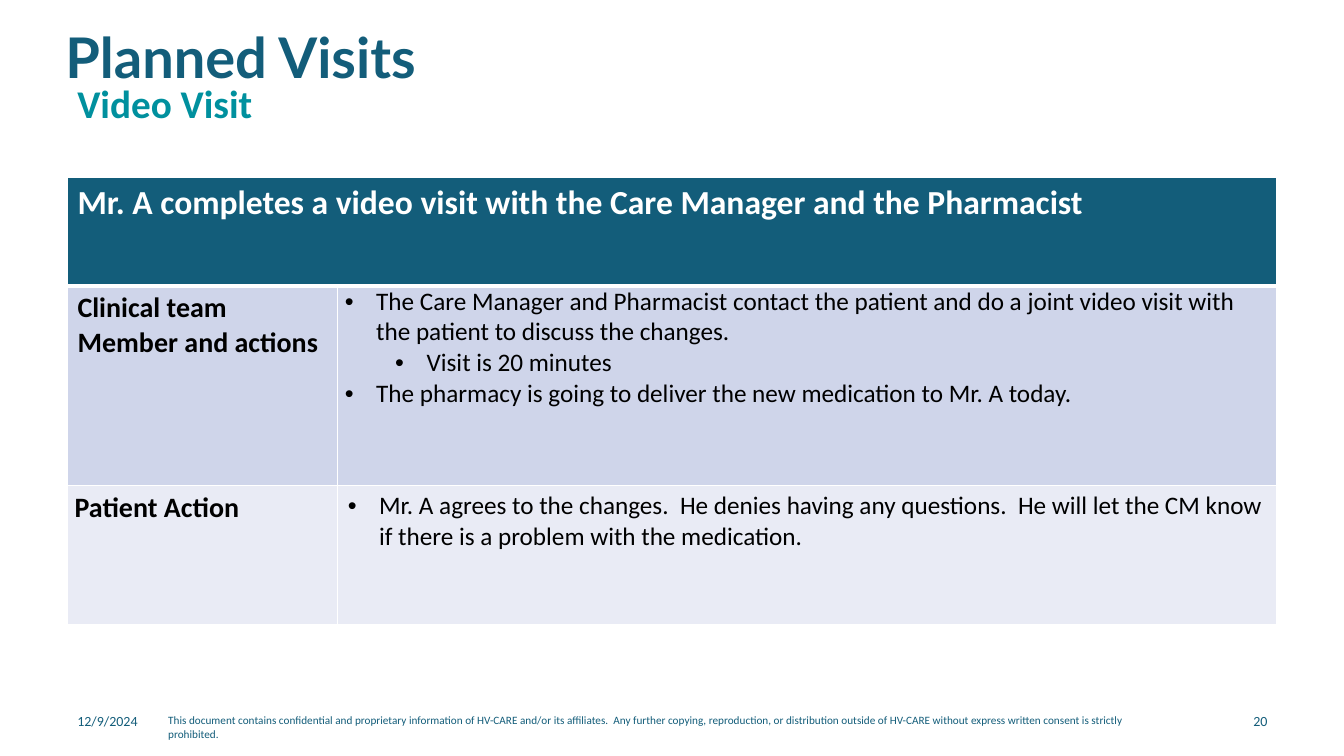
"""Build the Planned Visits slide with its video visit table."""
from dataclasses import dataclass
from typing import Optional

from lxml.etree import SubElement
from pptx import Presentation
from pptx.dml.color import RGBColor
from pptx.enum.text import MSO_ANCHOR as Anchor, PP_ALIGN as Align
from pptx.oxml.ns import qn
from pptx.util import Cm, Pt

COLORS = {
    "navy": "135D7A",
    "teal": "00909E",
    "white": "FFFFFF",
    "black": "000000",
    "lavender": "CFD5EA",
    "mist": "E9EBF5",
}
COLUMN_WIDTHS = (6.81, 23.67)
ROW_HEIGHTS = (2.74, 5.03, 3.51)
BULLET_INDENT = 0.79
LEVEL_INDENT = 1.27


@dataclass(frozen=True)
class Style:
    size: float
    color: str
    bold: bool = False
    font: str = "Calibri"
    spacing: Optional[float] = None
    align: Align = Align.LEFT


@dataclass(frozen=True)
class Label:
    text: str
    left: float
    top: float
    width: float
    height: float
    style: Style
    anchor: Anchor = Anchor.TOP


@dataclass(frozen=True)
class Entry:
    row: int
    column: int
    lines: tuple[tuple[str, int], ...]
    style: Style
    fill: str
    bulleted: bool = False
    tight: bool = False


FOOTER = Style(10, "navy")
ACTOR = Style(20, "black", bold=True)
ACTION = Style(18, "black")

LABELS = (
    Label("Planned Visits", 1.4, 0.64, 29.85, 1.57,
          Style(40, "navy", bold=True, font="Lato", spacing=0.9)),
    Label("12/9/2024", 1.7, 17.65, 2.57, 1.02, FOOTER, Anchor.MIDDLE),
    Label("20", 29.62, 17.65, 2.57, 1.02, Style(10, "navy", align=Align.RIGHT), Anchor.MIDDLE),
    Label("This document contains confidential and proprietary information of HV-CARE "
          "and/or its affiliates.  Any further copying, reproduction, or distribution "
          "outside of HV-CARE without express written consent is strictly prohibited.",
          3.99, 17.86, 25.91, 0.81, Style(8, "navy")),
    Label("Video Visit", 1.7, 1.04, 29.62, 2.29,
          Style(28, "teal", bold=True, spacing=0.9), Anchor.BOTTOM),
)

ENTRIES = (
    Entry(0, 0, (("Mr. A completes a video visit with the Care Manager and the Pharmacist", 0),),
          Style(24, "white", bold=True), "navy"),
    Entry(1, 0, (("Clinical team Member and actions", 0),), ACTOR, "lavender"),
    Entry(1, 1, (
        ("The Care Manager and Pharmacist contact the patient and do a joint video visit "
         "with the patient to discuss the changes.", 0),
        ("Visit is 20 minutes", 1),
        ("The pharmacy is going to deliver the new medication to Mr. A today.", 0),
    ), ACTION, "lavender", bulleted=True, tight=True),
    Entry(2, 0, (("Patient Action", 0),), Style(20, "black", bold=True, spacing=1.15),
          "mist", tight=True),
    Entry(2, 1, (
        ("Mr. A agrees to the changes.  He denies having any questions.  He will let the "
         "CM know if there is a problem with the medication.", 0),
    ), ACTION, "mist", bulleted=True),
)


def rgb(name: str) -> RGBColor:
    """Return the named colour."""
    return RGBColor.from_string(COLORS[name])


def write(paragraph, text: str, style: Style) -> None:
    """Set the text of a paragraph and format it."""
    paragraph.text = text
    paragraph.alignment = style.align
    if style.spacing:
        paragraph.line_spacing = style.spacing
    for run in paragraph.runs:
        run.font.name = style.font
        run.font.size = Pt(style.size)
        run.font.bold = style.bold
        run.font.color.rgb = rgb(style.color)


def add_bullet(paragraph, level: int) -> None:
    """Give a paragraph a hanging bullet at its level."""
    paragraph.level = level
    properties = paragraph._p.get_or_add_pPr()
    properties.set("marL", str(Cm(BULLET_INDENT + level * LEVEL_INDENT)))
    properties.set("indent", str(-Cm(BULLET_INDENT)))
    SubElement(properties, qn("a:buFont")).set("typeface", "Arial")
    SubElement(properties, qn("a:buChar")).set("char", "•")


def add_borders(cell, top: float, bottom: float) -> None:
    """Draw white borders, with the top and bottom widths in points."""
    properties = cell._tc.get_or_add_tcPr()
    for side, width in (("lnL", 1), ("lnR", 1), ("lnT", top), ("lnB", bottom)):
        border = SubElement(properties, qn(f"a:{side}"), w=str(Pt(width)))
        paint = SubElement(border, qn("a:solidFill"))
        SubElement(paint, qn("a:srgbClr")).set("val", COLORS["white"])


def draw_label(slide, label: Label) -> None:
    """Place one text box."""
    box = slide.shapes.add_textbox(Cm(label.left), Cm(label.top), Cm(label.width), Cm(label.height))
    frame = box.text_frame
    frame.word_wrap = True
    frame.vertical_anchor = label.anchor
    write(frame.paragraphs[0], label.text, label.style)


def fill_cell(cell, entry: Entry) -> None:
    """Write one table entry into its cell."""
    if entry.tight:
        cell.margin_left = cell.margin_right = Cm(0.18)
        cell.margin_top = cell.margin_bottom = Cm(0)
    frame = cell.text_frame
    for index, (text, level) in enumerate(entry.lines):
        paragraph = frame.add_paragraph() if index else frame.paragraphs[0]
        write(paragraph, text, entry.style)
        if entry.bulleted:
            add_bullet(paragraph, level)


def draw_visit_table(slide) -> None:
    """Draw the visit table with its merged heading."""
    visits = slide.shapes.add_table(
        len(ROW_HEIGHTS), len(COLUMN_WIDTHS), Cm(1.7), Cm(4.47),
        Cm(sum(COLUMN_WIDTHS)), Cm(sum(ROW_HEIGHTS))).table
    for column, width in zip(visits.columns, COLUMN_WIDTHS):
        column.width = Cm(width)
    for row, height in zip(visits.rows, ROW_HEIGHTS):
        row.height = Cm(height)
    visits.cell(0, 0).merge(visits.cell(0, 1))
    row_fills = {entry.row: entry.fill for entry in ENTRIES}
    for row, fill in row_fills.items():
        for column in range(len(COLUMN_WIDTHS)):
            cell = visits.cell(row, column)
            add_borders(cell, top=3 if row == 1 else 1, bottom=3 if row == 0 else 1)
            cell.fill.solid()
            cell.fill.fore_color.rgb = rgb(fill)
    for entry in ENTRIES:
        fill_cell(visits.cell(entry.row, entry.column), entry)


def main() -> None:
    """Build and save the slide."""
    deck = Presentation()
    deck.slide_width, deck.slide_height = Cm(33.87), Cm(19.05)
    slide = deck.slides.add_slide(deck.slide_layouts[6])
    for label in LABELS:
        draw_label(slide, label)
    draw_visit_table(slide)
    deck.save("out.pptx")


if __name__ == "__main__":
    main()
